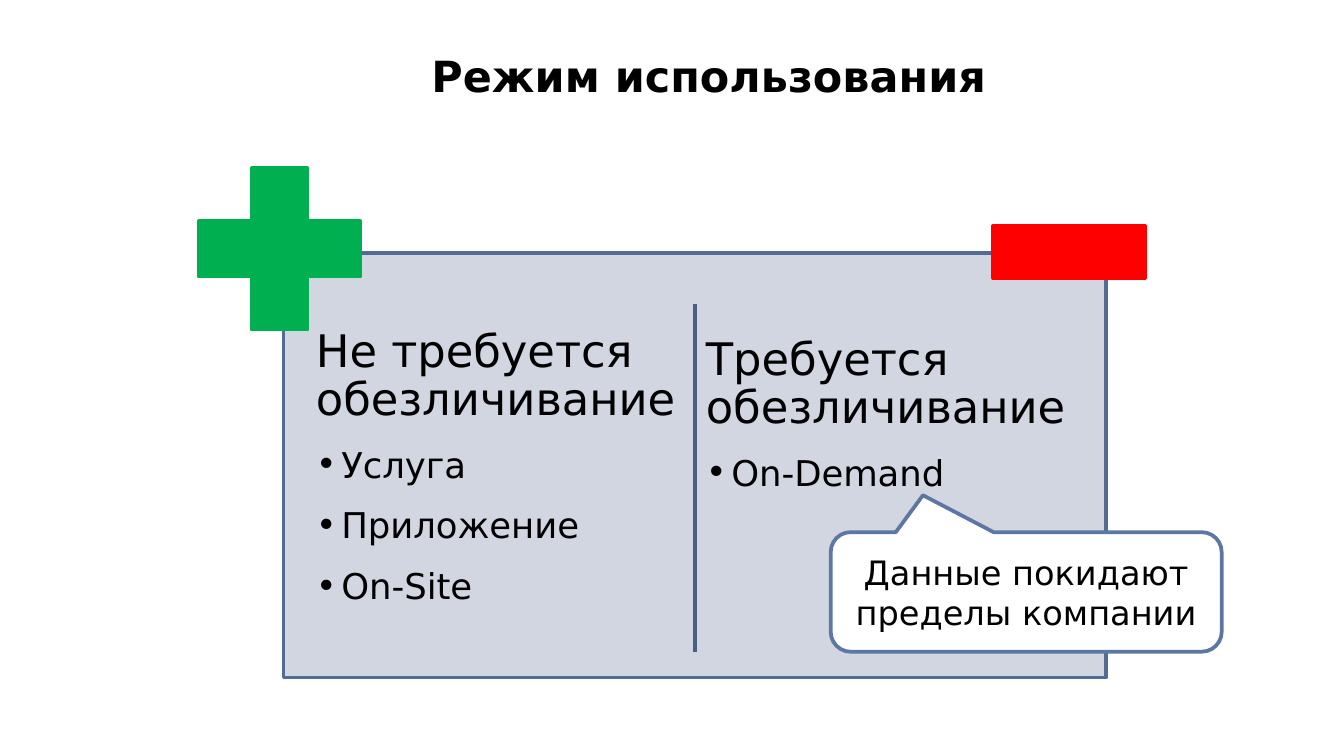
from lxml import etree
from pptx import Presentation
from pptx.dml.color import RGBColor
from pptx.enum import shapes, text
from pptx.oxml.ns import qn
from pptx.util import Cm, Pt

FONT = "DejaVu Sans"
BLACK = RGBColor(0x00, 0x00, 0x00)
WHITE = RGBColor(0xFF, 0xFF, 0xFF)
GREEN = RGBColor(0x00, 0xB0, 0x50)
RED = RGBColor(0xFF, 0x00, 0x00)
PANEL_FILL = RGBColor(0xD2, 0xD6, 0xE0)
PANEL_LINE = RGBColor(0x53, 0x6C, 0x95)
DIVIDER_LINE = RGBColor(0x4A, 0x5F, 0x83)
CALLOUT_LINE = RGBColor(0x5C, 0x77, 0xA4)


def place(shape, left, top, width, height):
    shape.left, shape.top = Cm(left), Cm(top)
    shape.width, shape.height = Cm(width), Cm(height)


def write(paragraph, words, size, bold=False, align=text.PP_ALIGN.LEFT,
          line_spacing=1.0, after=0, level=0, bullet=None):
    paragraph.text = words
    paragraph.level = level
    paragraph.alignment = align
    paragraph.line_spacing = line_spacing
    paragraph.space_before, paragraph.space_after = Pt(0), Pt(after)
    # Hanging indent and bullet
    properties = paragraph._p.get_or_add_pPr()
    indent = Cm(0.48) if bullet else 0
    properties.set("marL", str(indent))
    properties.set("indent", str(-indent))
    if bullet:
        etree.SubElement(properties, qn("a:buFont")).set("typeface", FONT)
        etree.SubElement(properties, qn("a:buChar")).set("char", bullet)
    else:
        etree.SubElement(properties, qn("a:buNone"))
    font = paragraph.runs[0].font
    font.name, font.size, font.bold = FONT, Pt(size), bold
    font.color.rgb = BLACK


def add_shape(slide, kind, box, fill, line, adjustments=()):
    shape = slide.shapes.add_shape(kind, *map(Cm, box))
    shape.shadow.inherit = False
    shape.fill.solid()
    shape.fill.fore_color.rgb = fill
    shape.line.color.rgb = line
    shape.line.width = Pt(2)
    for index, value in enumerate(adjustments):
        shape.adjustments[index] = value
    return shape


def fill_title(slide, box, words):
    title = slide.shapes.title
    place(title, *box)
    frame = title.text_frame
    frame.auto_size = text.MSO_AUTO_SIZE.NONE
    frame.vertical_anchor = text.MSO_ANCHOR.MIDDLE
    write(frame.paragraphs[0], words, 23, bold=True)


def fill_column(placeholder, box, heading, items):
    place(placeholder, *box)
    frame = placeholder.text_frame
    frame.auto_size = text.MSO_AUTO_SIZE.NONE
    frame.vertical_anchor = text.MSO_ANCHOR.TOP
    frame.margin_left = frame.margin_right = Cm(0.13)
    frame.margin_top = frame.margin_bottom = Cm(0.13)
    write(frame.paragraphs[0], heading, 24, line_spacing=0.9, after=12)
    for item in items:
        write(frame.add_paragraph(), item, 19, line_spacing=0.9, after=12,
              level=1, bullet="•")


def add_comparison(slide, box, columns):
    left, top, width, height = box
    auto = shapes.MSO_SHAPE
    bodies = list(slide.placeholders)[1:]

    # Panel, behind the lists
    panel = add_shape(slide, auto.RECTANGLE, box, PANEL_FILL, PANEL_LINE)
    bodies[0].element.addprevious(panel.element)

    # Lists
    offsets = ((0.48, 1.3, 6.2), (7.85, 1.45, 5.9))
    for body, (x, y, tall), (heading, items) in zip(bodies, offsets, columns):
        fill_column(body, (left + x, top + y, 7.21, tall), heading, items)

    # Plus and minus signs on the top corners
    add_shape(slide, auto.CROSS, (left - 1.6, top - 1.6, 3.05, 3.05),
              GREEN, GREEN, [0.328])
    add_shape(slide, auto.RECTANGLE,
              (left + width - 2.13, top - 0.51, 2.87, 0.99), RED, RED)

    # Divider in the middle
    middle = Cm(left + width / 2)
    divider = slide.shapes.add_connector(
        shapes.MSO_CONNECTOR.STRAIGHT,
        middle, Cm(top + 0.97), middle, Cm(top + height - 0.49))
    divider.line.color.rgb = DIVIDER_LINE
    divider.line.width = Pt(2)
    etree.SubElement(divider.element.spPr, qn("a:effectLst"))


def add_callout(slide, box, words):
    callout = add_shape(slide, shapes.MSO_SHAPE.ROUNDED_RECTANGULAR_CALLOUT,
                        box, WHITE, CALLOUT_LINE, [-0.264, -0.809, 0.167])
    frame = callout.text_frame
    frame.word_wrap = True
    frame.vertical_anchor = text.MSO_ANCHOR.MIDDLE
    write(frame.paragraphs[0], words, 18, align=text.PP_ALIGN.CENTER)


def main():
    presentation = Presentation()
    presentation.slide_width, presentation.slide_height = Cm(25.4), Cm(14.29)
    two_content = presentation.slide_layouts[3]
    slide = presentation.slides.add_slide(two_content)

    fill_title(slide, (7.9, 0.74, 16.87, 1.35), "Режим использования")
    add_comparison(slide, (5.36, 4.78, 15.54, 8.03), [
        ("Не требуется обезличивание", ["Услуга", "Приложение", "On-Site"]),
        ("Требуется обезличивание", ["On-Demand"]),
    ])
    add_callout(slide, (15.7, 10.06, 7.39, 2.26),
                "Данные покидают пределы компании")
    presentation.save("out.pptx")


if __name__ == "__main__":
    main()
